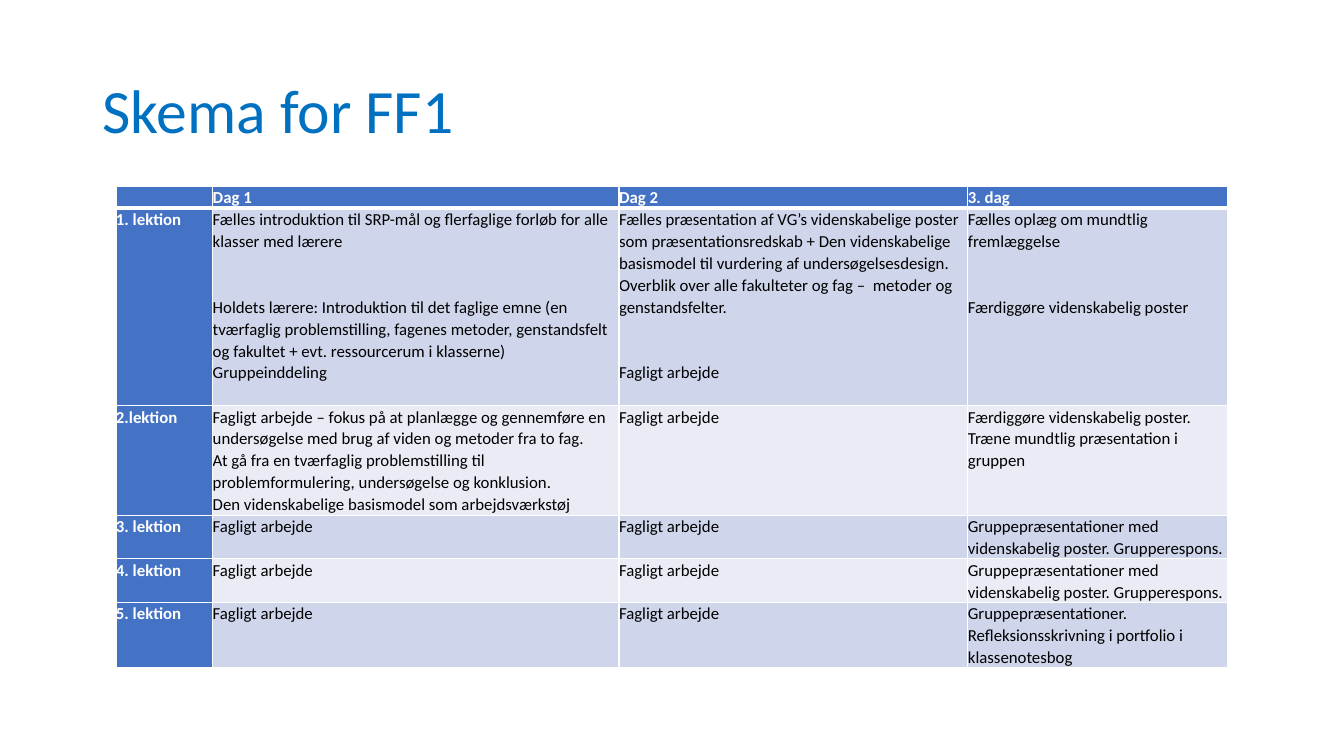
"""Build the FF1 timetable slide."""
from lxml import etree
from pptx import Presentation
from pptx import util as u
from pptx.dml.color import RGBColor
from pptx.enum import text
from pptx.oxml import ns


def add_run(p, words, size, color, bold=False):
    r = p.add_run()
    r.text = words
    r.font.name = "Calibri"
    r.font.size = u.Pt(size)
    r.font.bold = bold
    r.font.color.rgb = RGBColor.from_string(color)


def add_border(cell, side, width):
    ln = etree.SubElement(cell._tc.get_or_add_tcPr(), ns.qn(f"a:ln{side}"), w=str(u.Pt(width)))
    fill = etree.SubElement(ln, ns.qn("a:solidFill"))
    etree.SubElement(fill, ns.qn("a:srgbClr"), val="FFFFFF")


BLUE, BANDS = "4472C4", ("E9EBF5", "CFD5EA")
WORK = ["Fagligt arbejde"]
GROUPS = ["Gruppepræsentationer med videnskabelig poster. Grupperespons."]
rows = [
    [[], ["Dag 1"], ["Dag 2"], ["3. dag"]],
    [["1. lektion"],
     ["Fælles introduktion til SRP-mål og flerfaglige forløb for alle klasser med lærere",
      "Holdets lærere: Introduktion til det faglige emne (en tværfaglig problemstilling, "
      "fagenes metoder, genstandsfelt og fakultet + evt. ressourcerum i klasserne)",
      "Gruppeinddeling"],
     ["Fælles præsentation af VG’s videnskabelige poster som præsentationsredskab + "
      "Den videnskabelige basismodel til vurdering af undersøgelsesdesign.",
      "Overblik over alle fakulteter og fag –  metoder og genstandsfelter.",
      "Fagligt arbejde"],
     ["Fælles oplæg om mundtlig fremlæggelse", "Færdiggøre videnskabelig poster"]],
    [["2.lektion"],
     ["Fagligt arbejde – fokus på at planlægge og gennemføre en undersøgelse "
      "med brug af viden og metoder fra to fag.",
      "At gå fra en tværfaglig problemstilling til problemformulering, undersøgelse og konklusion.",
      "Den videnskabelige basismodel som arbejdsværkstøj"],
     WORK,
     ["Færdiggøre videnskabelig poster.", "Træne mundtlig præsentation i gruppen"]],
    [["3. lektion"], WORK, WORK, GROUPS],
    [["4. lektion"], WORK, WORK, GROUPS],
    [["5. lektion"], WORK, WORK,
     ["Gruppepræsentationer.", "Refleksionsskrivning i portfolio i klassenotesbog"]],
]
two_line_gaps = {(1, 1, 1), (1, 2, 2), (1, 3, 1)}

prs = Presentation()
prs.slide_width, prs.slide_height = u.Inches(13.33), u.Inches(7.5)
s = prs.slides.add_slide(prs.slide_layouts[6])

title = s.shapes.add_textbox(u.Inches(0.92), u.Inches(0.4), u.Inches(11.5), u.Inches(1.45))
tf = title.text_frame
tf.word_wrap = True
tf.vertical_anchor = text.MSO_ANCHOR.MIDDLE
tf.paragraphs[0].line_spacing = 0.9
add_run(tf.paragraphs[0], "Skema for FF1", 44, "0070C0")

table = s.shapes.add_table(6, 4, u.Inches(1.15), u.Inches(1.85),
                           u.Inches(11.03), u.Inches(4.77)).table
for col, width in zip(table.columns, (0.96, 4.03, 3.46, 2.58)):
    col.width = u.Inches(width)
for row, height in zip(table.rows, (0.21, 1.96, 1.09, 0.43, 0.43, 0.65)):
    row.height = u.Inches(height)

for i, row in enumerate(rows):
    for j, lines in enumerate(row):
        cell = table.cell(i, j)
        heading = i == 0 or j == 0
        cell.margin_left = cell.margin_right = cell.margin_top = cell.margin_bottom = 0
        for side in "LRTB":
            add_border(cell, side, 3 if (i, side) in ((0, "B"), (1, "T")) else 1)
        cell.fill.solid()
        cell.fill.fore_color.rgb = RGBColor.from_string(BLUE if heading else BANDS[i % 2])
        tf = cell.text_frame
        for k, words in enumerate(lines):
            p = tf.add_paragraph() if k else tf.paragraphs[0]
            p.line_spacing = 1.07
            if (i, j, k) in two_line_gaps:
                p.space_before = u.Pt(31.4)
            add_run(p, words, 12, "FFFFFF" if heading else "000000", heading)
        if not lines:
            etree.SubElement(tf.paragraphs[0]._p, ns.qn("a:endParaRPr"), sz="1200")

prs.save("out.pptx")
